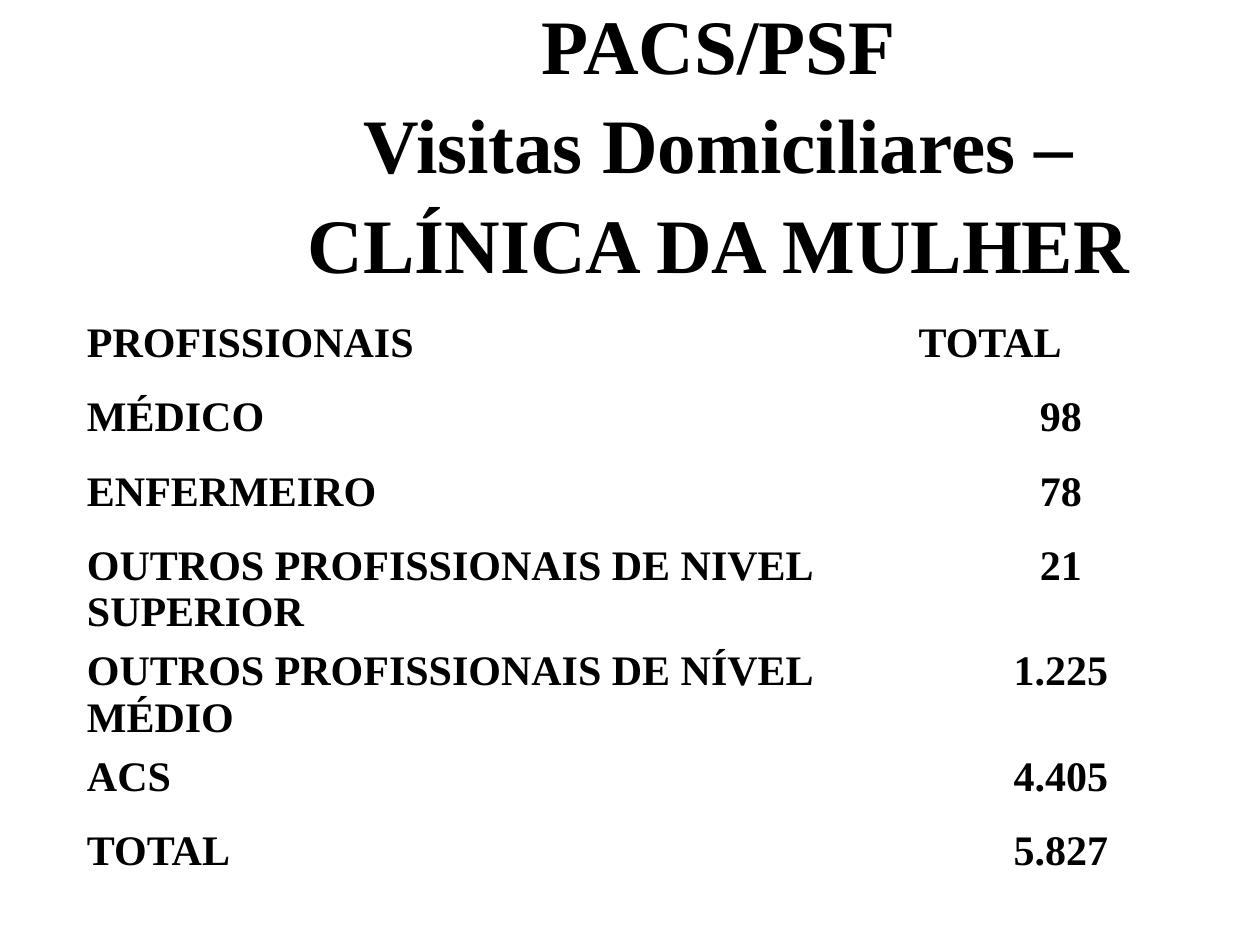
from pptx import Presentation
from pptx import util as u
from pptx.dml.color import RGBColor
from pptx.enum import text

COLORS = {"ink": "000000"}
ROWS = [
    ("PROFISSIONAIS", "TOTAL"),
    ("MÉDICO", "98"),
    ("ENFERMEIRO", "78"),
    ("OUTROS PROFISSIONAIS DE NIVEL SUPERIOR", "21"),
    ("OUTROS PROFISSIONAIS DE NÍVEL MÉDIO", "1.225"),
    ("ACS", "4.405"),
    ("TOTAL", "5.827"),
]


class Deck:
    font = "Times New Roman"

    def __init__(self, prs):
        self.prs = prs
        self.s = prs.slides.add_slide(prs.slide_layouts[5])

    def style(self, p, size, align):
        p.alignment = align
        p.font.name = self.font
        p.font.size = u.Pt(size)
        p.font.bold = True
        p.font.color.rgb = RGBColor.from_string(COLORS["ink"])

    def title(self, lines, left, top, width, height, first_indent):
        sp = self.s.shapes.title
        sp.left, sp.top = u.Inches(left), u.Inches(top)
        sp.width, sp.height = u.Inches(width), u.Inches(height)
        tf = sp.text_frame
        tf.word_wrap = True
        tf.auto_size = text.MSO_AUTO_SIZE.NONE
        tf.vertical_anchor = text.MSO_ANCHOR.MIDDLE
        tf.text = "\n".join(lines)
        for p in tf.paragraphs:
            self.style(p, 44, text.PP_ALIGN.CENTER)
            p.line_spacing = 1.08
            p.space_before = u.Pt(0)
        pPr = tf.paragraphs[0]._p.get_or_add_pPr()
        pPr.set("marL", str(u.Inches(first_indent)))
        pPr.set("indent", "0")

    def table(self, rows, left, top, widths, row_height):
        frame = self.s.shapes.add_table(
            len(rows), len(widths), u.Inches(left), u.Inches(top),
            u.Inches(sum(widths)), u.Inches(row_height * len(rows)))
        tbl = frame.table
        tbl.first_row = tbl.horz_banding = False
        for col, width in zip(tbl.columns, widths):
            col.width = u.Inches(width)
        for i, row in enumerate(rows):
            tbl.rows[i].height = u.Inches(row_height)
            for j, value in enumerate(row):
                cell = tbl.cell(i, j)
                cell.fill.background()
                cell.text = value
                centred = i > 0 and j > 0
                align = text.PP_ALIGN.CENTER if centred else text.PP_ALIGN.LEFT
                self.style(cell.text_frame.paragraphs[0], 24, align)


def main():
    prs = Presentation()
    prs.slide_width, prs.slide_height = u.Inches(10), u.Inches(7.5)
    deck = Deck(prs)
    deck.title(["PACS/PSF", "Visitas Domiciliares – CLÍNICA DA MULHER"],
               1.06, 0.52, 8.54, 1.17, first_indent=0.75)
    deck.table(ROWS, 0.59, 2.49, [6.6, 2.46], 0.59)
    prs.save("out.pptx")


if __name__ == "__main__":
    main()
